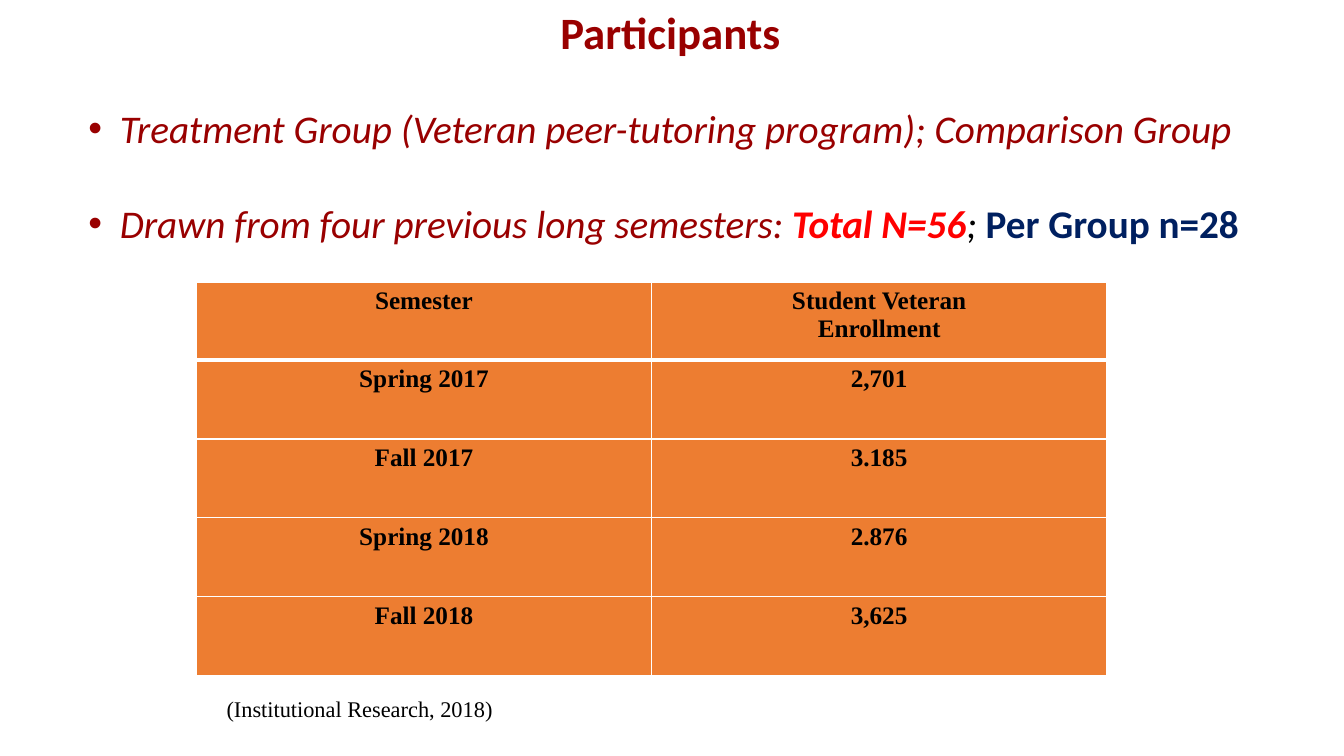
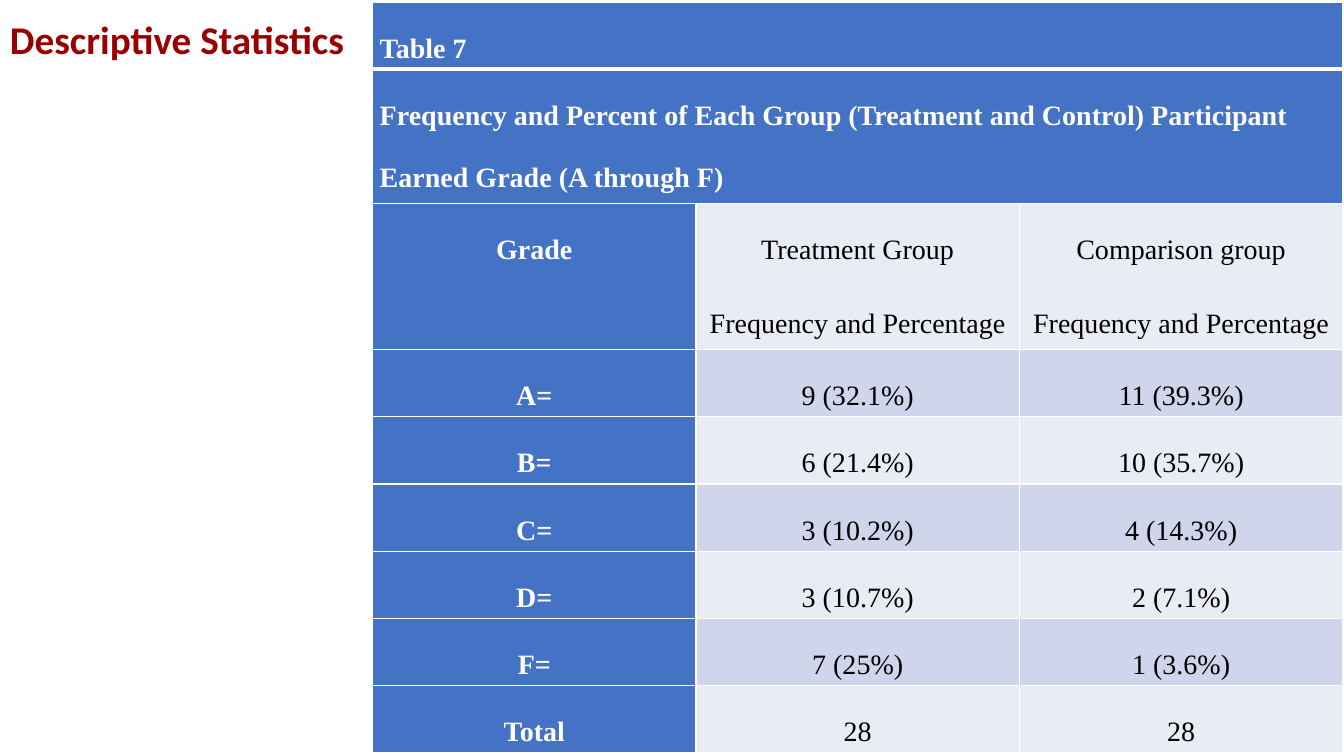
from pptx import Presentation
from pptx.dml.color import RGBColor
from pptx.enum.text import MSO_AUTO_SIZE, PP_ALIGN
from pptx.oxml import parse_xml
from pptx.oxml.ns import nsdecls
from pptx.util import Cm, Pt

# Theme: colours, type styles and paragraph formats
THEME = {
    "white": "FFFFFF", "orange": "ED7D31", "blue": "4472C4",
    "bands": ("E9EBF5", "CFD5EA"),
    "title": {"name": "Calibri", "size": Pt(32), "bold": True, "color": "990000"},
    "side_title": {"name": "Calibri", "size": Pt(28), "bold": True, "color": "990000"},
    "body": {"name": "Calibri", "size": Pt(28), "italic": True, "color": "990000"},
    "note": {"name": "Times New Roman", "size": Pt(16), "color": "000000"},
    "count": {"name": "Times New Roman", "size": Pt(18), "bold": True, "color": "000000"},
    "head": {"name": "Times New Roman", "size": Pt(20), "bold": True, "color": "FFFFFF"},
    "value": {"name": "Times New Roman", "size": Pt(20), "bold": False, "color": "000000"},
    "left": {"alignment": PP_ALIGN.LEFT},
    "center": {"alignment": PP_ALIGN.CENTER},
    "bullet": {"alignment": PP_ALIGN.LEFT, "space_after": Pt(34)},
    "double": {"line_spacing": 2.0, "space_after": Pt(8)},
}


def write(tf, paras, font, para_format):
    """Fill a text frame; each paragraph is a list of (text, font changes)."""
    for i, runs in enumerate(paras):
        p = tf.paragraphs[0] if i == 0 else tf.add_paragraph()
        for key, value in para_format.items():
            setattr(p, key, value)
        for text, changes in runs:
            r = p.add_run()
            r.text = text
            for key, value in {**font, **changes}.items():
                if key == "color":
                    r.font.color.rgb = RGBColor.from_string(value)
                else:
                    setattr(r.font, key, value)


def add_grid(s, left, top, col_width, heights, rows, style):
    """Add a table; style(row, col) gives fill, font, paragraph format, margins."""
    cols = max(len(row) for row in rows)
    table = s.shapes.add_table(len(rows), cols, Cm(left), Cm(top),
                               Cm(col_width * cols), Cm(sum(heights))).table
    for col in table.columns:
        col.width = Cm(col_width)
    for i, row in enumerate(rows):
        table.rows[i].height = Cm(heights[i])
        for j in range(cols):
            cell = table.cell(i, j)
            fill, font, para_format, margins = style(i, j)
            # The rule below the header row is heavier than the others
            widths = {"L": 1, "R": 1, "T": 3 if i == 1 else 1, "B": 3 if i == 0 else 1}
            for side, width in widths.items():
                cell._tc.get_or_add_tcPr().append(parse_xml(
                    f'<a:ln{side} {nsdecls("a")} w="{Pt(width)}"><a:solidFill>'
                    f'<a:srgbClr val="{THEME["white"]}"/></a:solidFill></a:ln{side}>'))
            cell.fill.solid()
            cell.fill.fore_color.rgb = RGBColor.from_string(fill)
            for key, value in margins.items():
                setattr(cell, key, value)
            if j < len(row):
                paras = [[(line, {})] for line in row[j].split("\n")]
                write(cell.text_frame, paras, font, para_format)
        if len(row) < cols:
            table.cell(i, 0).merge(table.cell(i, cols - 1))


prs = Presentation()
prs.slide_width, prs.slide_height = Cm(33.87), Cm(19.05)
participants, statistics = [prs.slides.add_slide(prs.slide_layouts[6]) for _ in range(2)]

# Participants: enrollment table
add_grid(participants, 4.95, 7.11, 11.47, [1.96] + [1.99] * 4, [
    ("Semester", "Student Veteran\nEnrollment"),
    ("Spring 2017", "2,701"),
    ("Fall 2017", "3.185"),
    ("Spring 2018", "2.876"),
    ("Fall 2018", "3,625"),
], lambda i, j: (THEME["orange"], THEME["count"], THEME["center"], {}))

# Descriptive statistics: grade table
cell_margins = {"margin_left": Cm(0.18), "margin_right": Cm(0.18),
                "margin_top": 0, "margin_bottom": 0}


def grade_style(i, j):
    is_head = i < 2 or j == 0
    fill = THEME["blue"] if is_head else THEME["bands"][i % 2]
    align = THEME["left"] if i < 2 else THEME["center"]
    return (fill, THEME["head" if is_head else "value"],
            {**THEME["double"], **align}, cell_margins)


add_grid(statistics, 9.39, 0.05, 8.15, [1.65, 3.3, 3.61] + [1.65] * 6, [
    ("Table 7",),
    ("Frequency and Percent of Each Group (Treatment and Control) Participant "
     "Earned Grade (A through F)",),
    ("Grade", "Treatment Group\nFrequency and Percentage",
     "Comparison group\nFrequency and Percentage"),
    ("A=", "9 (32.1%)", "11 (39.3%)"),
    ("B=", "6 (21.4%)", "10 (35.7%)"),
    ("C=", "3 (10.2%)", "4 (14.3%)"),
    ("D=", "3 (10.7%)", "2 (7.1%)"),
    ("F=", "7 (25%)", "1 (3.6%)"),
    ("Total", "28", "28"),
], grade_style)

# Titles, bullets and source note
bullets = [
    [("Treatment Group (Veteran peer-tutoring program); Comparison Group", {})],
    [("Drawn from four previous long semesters: ", {}),
     ("Total N=56", {"color": "FF0000", "bold": True}),
     ("; ", {"color": "000000"}),
     ("Per Group n=28", {"color": "002060", "bold": True, "italic": False})],
]
for s, box, paras, font, para_format in [
    (participants, (13.87, 0, 6.12, 1.63), [[("Participants", {})]], "title", "left"),
    (participants, (1.98, 2.51, 29.9, 4.62), bullets, "body", "bullet"),
    (participants, (5.46, 17.4, 7.32, 0.94),
     [[("(Institutional Research, 2018)", {})]], "note", "left"),
    (statistics, (0, 0.25, 9.04, 2.64),
     [[("Descriptive Statistics", {})]], "side_title", "left"),
]:
    tf = s.shapes.add_textbox(*[Cm(v) for v in box]).text_frame
    tf.word_wrap = False
    tf.auto_size = MSO_AUTO_SIZE.SHAPE_TO_FIT_TEXT
    write(tf, paras, THEME[font], THEME[para_format])
    if para_format == "bullet":
        for p in tf.paragraphs:
            pPr = p._p.get_or_add_pPr()
            pPr.set("marL", str(Cm(0.79)))
            pPr.set("indent", str(-Cm(0.79)))
            for tag in ('buFont typeface="Arial"', 'buChar char="•"'):
                pPr.append(parse_xml(f'<a:{tag} {nsdecls("a")}/>'))

prs.save("out.pptx")
